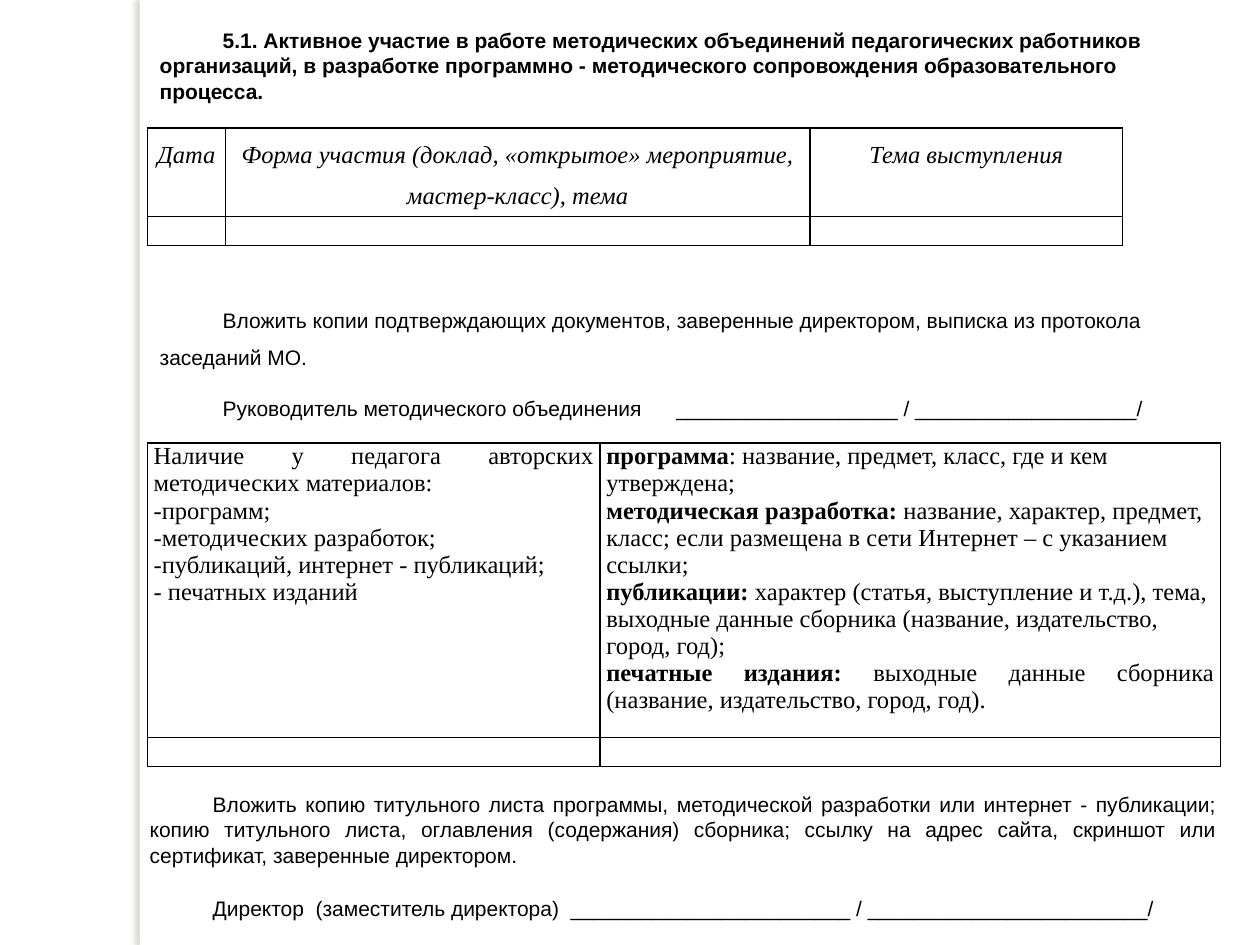
from lxml import etree
from pptx import Presentation
from pptx.dml.color import RGBColor
from pptx.enum.shapes import MSO_SHAPE
from pptx.enum.text import MSO_ANCHOR, PP_ALIGN
from pptx.oxml import parse_xml
from pptx.util import Pt

LEFT, CENTER, JUSTIFY = PP_ALIGN.LEFT, PP_ALIGN.CENTER, PP_ALIGN.JUSTIFY
MIDDLE = MSO_ANCHOR.MIDDLE
RECTANGLE = MSO_SHAPE.RECTANGLE
NS = 'xmlns:a="http://schemas.openxmlformats.org/drawingml/2006/main"'
BLACK = "000000"
LINE, WIDE_LINE = 14.6, 21.1


def rgb(value):
    return RGBColor.from_string(value)


def add_run(p, text, font, size, bold=False, italic=False):
    r = p.add_run()
    r.text = text
    r.font.name, r.font.size = font, Pt(size)
    r.font.bold, r.font.italic = bold, italic
    r.font.color.rgb = rgb(BLACK)


prs = Presentation()
prs.slide_width, prs.slide_height = Pt(720), Pt(540)
s = prs.slides.add_slide(prs.slide_layouts[6])

# Page edge with a soft shadow to its left
edge = s.shapes.add_shape(RECTANGLE, Pt(80), Pt(0), Pt(5.5), Pt(540))
edge.fill.solid()
edge.fill.fore_color.rgb = rgb("FFFFFF")
edge.line.fill.background()
edge.shadow.inherit = False
edge._element.spPr.remove(edge._element.spPr[-1])
edge._element.spPr.append(parse_xml(
    f'<a:effectLst {NS}><a:outerShdw blurRad="{Pt(3)}" dist="{Pt(3)}" dir="10800000" '
    'algn="tl" rotWithShape="0"><a:srgbClr val="736F63"><a:alpha val="25000"/>'
    '</a:srgbClr></a:outerShdw></a:effectLst>'))

# Text boxes: place, then (text, bold, alignment, line spacing, space before)
text_boxes = [
    ((84.2, 11.5, 579.6, 232.6), [
        ("5.1. Активное участие в работе методических объединений педагогических "
         "работников организаций, в разработке программно - методического "
         "сопровождения образовательного процесса.", True, LEFT, LINE, 0),
        ("Вложить копии подтверждающих документов, заверенные директором, выписка "
         "из протокола заседаний МО.", False, LEFT, WIDE_LINE, 109.7),
        ("Руководитель методического объединения      ___________________ / "
         "___________________/", False, LEFT, LINE, 14.6),
    ]),
    ((78.5, 440.6, 624.2, 97.2), [
        ("Вложить копию титульного листа программы, методической разработки или "
         "интернет - публикации; копию титульного листа, оглавления (содержания) "
         "сборника; ссылку на адрес сайта, скриншот или сертификат, заверенные "
         "директором.", False, JUSTIFY, LINE, 0),
        ("Директор  (заместитель директора)  ________________________ / "
         "________________________/", False, JUSTIFY, LINE, 16),
    ]),
]
for place, paragraphs in text_boxes:
    tf = s.shapes.add_textbox(*map(Pt, place)).text_frame
    tf.word_wrap = True
    tf.vertical_anchor = MIDDLE
    for i, (text, bold, align, spacing, before) in enumerate(paragraphs):
        p = tf.add_paragraph() if i else tf.paragraphs[0]
        p.alignment = align
        p.line_spacing, p.space_before = Pt(spacing), Pt(before)
        p._p.get_or_add_pPr().set("indent", str(Pt(36)))
        add_run(p, text, "Arial", 12, bold)

# Tables: top, columns, first row height, italic, line spacing, header cells.
# A cell is a list of paragraphs: (alignment, bold lead, plain text)
tables = [
    (73.2, [44.6, 334.1, 178.6], 50.3, True, 1.5, [
        [(CENTER, "", "Дата")],
        [(CENTER, "", "Форма участия (доклад, «открытое» мероприятие, "
                      "мастер-класс), тема")],
        [(CENTER, "", "Тема выступления")],
    ]),
    (253.2, [258.7, 354.5], 168, False, 1.0, [
        [(JUSTIFY, "", "Наличие у педагога авторских методических материалов:"),
         (JUSTIFY, "", "-программ;"),
         (JUSTIFY, "", "-методических разработок;"),
         (JUSTIFY, "", "-публикаций, интернет - публикаций;"),
         (JUSTIFY, "", "- печатных изданий")],
        [(LEFT, "программа", ": название, предмет, класс, где и кем утверждена;"),
         (LEFT, "методическая разработка:", " название, характер, предмет, класс; "
          "если размещена в сети Интернет – с указанием ссылки;"),
         (LEFT, "публикации: ", "характер (статья, выступление и т.д.), тема, "
          "выходные данные сборника (название, издательство, город, год);"),
         (JUSTIFY, "печатные издания:", " выходные данные сборника (название, "
          "издательство, город, год).")],
    ]),
]
for top, widths, height, italic, spacing, header in tables:
    heights = [height, 16.8]
    table = s.shapes.add_table(2, len(widths), Pt(84.2), Pt(top),
                               Pt(sum(widths)), Pt(sum(heights))).table
    table.first_row = table.horz_banding = False
    for column, width in zip(table.columns, widths):
        column.width = Pt(width)
    for row, row_height in zip(table.rows, heights):
        row.height = Pt(row_height)

    for cell in table.iter_cells():
        cell.margin_left = cell.margin_right = Pt(3.6)
        cell.margin_top = cell.margin_bottom = Pt(0)
        tcPr = cell._tc.get_or_add_tcPr()
        for side in ("lnL", "lnR", "lnT", "lnB"):
            tcPr.append(parse_xml(
                f'<a:{side} {NS} w="{Pt(1)}"><a:solidFill><a:srgbClr val="{BLACK}"/>'
                f'</a:solidFill></a:{side}>'))
        cell.fill.background()

    for cell, paragraphs in zip(table.rows[0].cells, header):
        tf = cell.text_frame
        for i, (align, lead, text) in enumerate(paragraphs):
            p = tf.add_paragraph() if i else tf.paragraphs[0]
            p.alignment, p.line_spacing = align, spacing
            if lead:
                add_run(p, lead, "Times New Roman", 14, True)
            add_run(p, text, "Times New Roman", 14, False, italic)

    # Empty cells keep a small font so the row stays low
    for cell in table.rows[1].cells:
        end = etree.SubElement(
            cell.text_frame.paragraphs[0]._p,
            "{http://schemas.openxmlformats.org/drawingml/2006/main}endParaRPr")
        end.set("sz", "1200")

prs.save("out.pptx")
